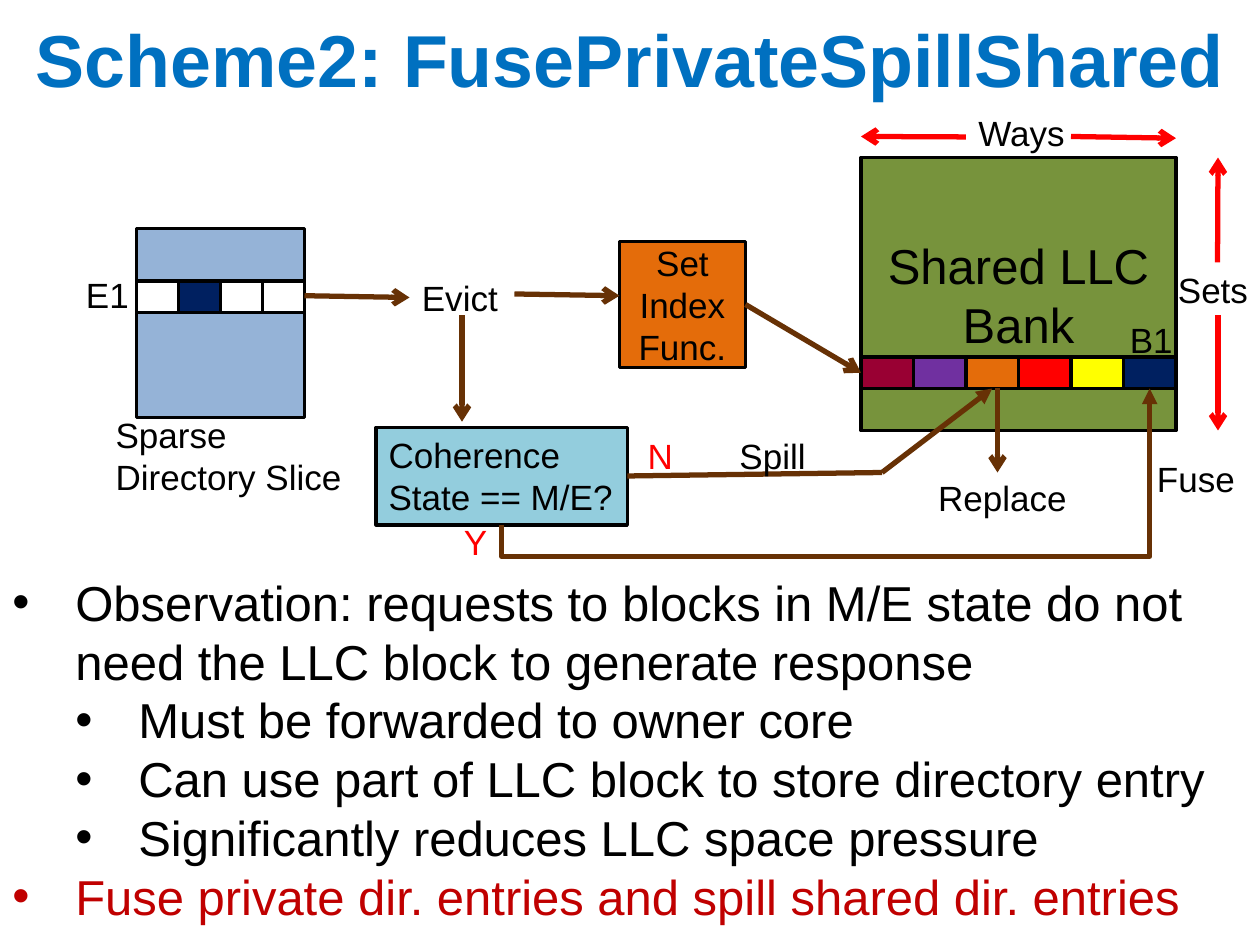
from dataclasses import dataclass
from typing import Optional

from lxml.etree import SubElement
from pptx import Presentation
from pptx.dml.color import RGBColor
from pptx.enum.shapes import MSO_CONNECTOR, MSO_SHAPE
from pptx.enum.text import MSO_ANCHOR, MSO_AUTO_SIZE, PP_ALIGN
from pptx.oxml.ns import qn
from pptx.util import Pt


@dataclass(frozen=True)
class Theme:
    font: str = "Arial"
    title_size: float = 42
    body_size: float = 28
    label_size: float = 20
    border: float = 2
    stroke: float = 3
    title: str = "0070C0"
    black: str = "000000"
    white: str = "FFFFFF"
    red: str = "FF0000"
    emphasis: str = "C00000"
    flow: str = "673105"
    navy: str = "002060"
    directory: str = "95B3D7"
    bank: str = "77933C"
    orange: str = "E46C0A"
    decision: str = "93CDDD"
    maroon: str = "990033"
    purple: str = "7030A0"
    yellow: str = "FFFF00"


T = Theme()


@dataclass(frozen=True)
class Box:
    x: float
    y: float
    w: float
    h: float
    fill: str
    text: str = ""
    size: float = T.label_size
    align: PP_ALIGN = PP_ALIGN.CENTER
    anchor: MSO_ANCHOR = MSO_ANCHOR.MIDDLE
    wrap: bool = True


@dataclass(frozen=True)
class Label:
    text: str
    x: float
    y: float
    w: float
    h: float = 31.5
    color: str = T.black


@dataclass(frozen=True)
class Line:
    x1: float
    y1: float
    x2: float
    y2: float
    color: str = T.flow
    head: Optional[str] = "arrow"


@dataclass(frozen=True)
class Bullet:
    text: str
    level: int = 0
    color: str = T.black


def style(p, size: float, color: str, bold: bool = False) -> None:
    for r in p.runs:
        r.font.name = T.font
        r.font.size = Pt(size)
        r.font.bold = bold
        r.font.color.rgb = RGBColor.from_string(color)


def draw_box(s, box: Box) -> None:
    sp = s.shapes.add_shape(MSO_SHAPE.RECTANGLE, Pt(box.x), Pt(box.y), Pt(box.w), Pt(box.h))
    sp.shadow.inherit = False
    sp.fill.solid()
    sp.fill.fore_color.rgb = RGBColor.from_string(box.fill)
    sp.line.color.rgb = RGBColor.from_string(T.black)
    sp.line.width = Pt(T.border)
    if box.text:
        tf = sp.text_frame
        tf.text = box.text
        tf.word_wrap = box.wrap
        tf.vertical_anchor = box.anchor
        for p in tf.paragraphs:
            p.alignment = box.align
            style(p, box.size, T.black)


def draw_cells(s, x: float, y: float, w: float, h: float, fills: list[str]) -> None:
    for i, fill in enumerate(fills):
        draw_box(s, Box(x + i * w, y, w, h, fill))


def draw_label(s, label: Label) -> None:
    sp = s.shapes.add_textbox(Pt(label.x), Pt(label.y), Pt(label.w), Pt(label.h))
    tf = sp.text_frame
    tf.text = label.text
    tf.word_wrap = False
    tf.auto_size = MSO_AUTO_SIZE.SHAPE_TO_FIT_TEXT
    for p in tf.paragraphs:
        style(p, T.label_size, label.color)


def draw_line(s, line: Line, kind: MSO_CONNECTOR = MSO_CONNECTOR.STRAIGHT):
    c = s.shapes.add_connector(kind, Pt(line.x1), Pt(line.y1), Pt(line.x2), Pt(line.y2))
    c.line.color.rgb = RGBColor.from_string(line.color)
    c.line.width = Pt(T.stroke)
    if line.head:
        SubElement(c.line._get_or_add_ln(), qn("a:tailEnd"), type=line.head)
    SubElement(c._element.spPr, qn("a:effectLst"))
    return c


def draw_fuse_path(s, x1: float, y1: float, x2: float, y2: float, drop: float) -> None:
    cx, cy = (x1 + x2) / 2, (y1 + y2) / 2
    dx, dy = (y1 - y2) / 2, (x2 - x1) / 2
    line = Line(cx + dx, cy + dy, cx - dx, cy - dy, head="triangle")
    spPr = draw_line(s, line, MSO_CONNECTOR.ELBOW)._element.spPr
    spPr.find(qn("a:xfrm")).set("rot", "5400000")
    geom = spPr.find(qn("a:prstGeom"))
    guides = geom.find(qn("a:avLst"))
    if guides is None:
        guides = SubElement(geom, qn("a:avLst"))
    adjust = round(-drop / (y1 - y2) * 100000)
    SubElement(guides, qn("a:gd"), name="adj1", fmla=f"val {adjust}")


def draw_title(s, text: str) -> None:
    tf = s.shapes.add_textbox(0, 0, Pt(720), Pt(66)).text_frame
    tf.word_wrap = True
    tf.vertical_anchor = MSO_ANCHOR.MIDDLE
    p = tf.paragraphs[0]
    p.text = text
    p.alignment = PP_ALIGN.CENTER
    style(p, T.title_size, T.title, bold=True)


def draw_bullets(s, bullets: list[Bullet]) -> None:
    tf = s.shapes.add_textbox(0, Pt(323.5), Pt(719.5), Pt(211)).text_frame
    tf.word_wrap = True
    for i, bullet in enumerate(bullets):
        p = tf.add_paragraph() if i else tf.paragraphs[0]
        p.text = bullet.text
        p.level = bullet.level
        pPr = p._p.get_or_add_pPr()
        pPr.set("marL", str(Pt(36 * (bullet.level + 1))))
        pPr.set("indent", str(Pt(-36)))
        SubElement(pPr, qn("a:buFont"), typeface=T.font)
        SubElement(pPr, qn("a:buChar"), char="•")
        style(p, T.body_size, bullet.color)


BOXES = [
    Box(78, 130.5, 96, 108, T.directory),
    Box(492, 90, 180, 156, T.bank, "Shared LLC Bank", T.body_size),
    Box(354, 138, 72, 72, T.orange, "Set\nIndex\nFunc."),
    Box(215, 244.25, 143.5, 55.75, T.decision, "Coherence\nState == M/E?",
        align=PP_ALIGN.LEFT, anchor=MSO_ANCHOR.TOP, wrap=False),
]
LINES = [
    Line(174, 169, 234, 170),
    Line(294, 168, 354, 169),
    Line(426, 174, 492, 213),
    Line(264, 180, 264, 241),
    Line(570, 222, 570, 270),
    Line(358.5, 272, 504, 270, head=None),
    Line(504, 270, 567, 222, head="triangle"),
    Line(696, 180, 696, 246, T.red),
    Line(695.75, 150, 696, 90, T.red),
    Line(612, 78, 672, 79, T.red),
    Line(552, 78.25, 492, 78, T.red),
]
LABELS = [
    Label("Sparse\nDirectory Slice", 59, 232.5, 145, 55.5),
    Label("E1", 42, 153, 39.5),
    Label("Evict", 234, 154.5, 58),
    Label("Sets", 666, 150, 54.5),
    Label("Ways", 552, 60, 64),
    Label("B1", 638.5, 178.5, 39.5),
    Label("Replace", 529, 268.75, 88.5),
    Label("N", 363, 244.75, 29.5, color=T.red),
    Label("Y", 258, 294, 28, color=T.red),
    Label("Spill", 415.5, 244.75, 52.5),
    Label("Fuse", 654, 258, 60),
]
BULLETS = [
    Bullet("Observation: requests to blocks in M/E state do not need the LLC block "
           "to generate response"),
    Bullet("Must be forwarded to owner core", 1),
    Bullet("Can use part of LLC block to store directory entry", 1),
    Bullet("Significantly reduces LLC space pressure", 1),
    Bullet("Fuse private dir. entries and spill shared dir. entries", color=T.emphasis),
]


def main() -> None:
    prs = Presentation()
    prs.slide_width, prs.slide_height = Pt(720), Pt(540)
    s = prs.slides.add_slide(prs.slide_layouts[6])
    draw_title(s, "Scheme2: FusePrivateSpillShared")
    for box in BOXES:
        draw_box(s, box)
    draw_cells(s, 78, 160.5, 24, 18, [T.white, T.navy, T.white, T.white])
    draw_cells(s, 492, 204, 30, 18,
               [T.maroon, T.purple, T.orange, T.red, T.yellow, T.navy])
    for line in LINES:
        draw_line(s, line)
    draw_fuse_path(s, 286.75, 300, 657, 222, drop=18)
    for label in LABELS:
        draw_label(s, label)
    draw_bullets(s, BULLETS)
    prs.save("out.pptx")


if __name__ == "__main__":
    main()
